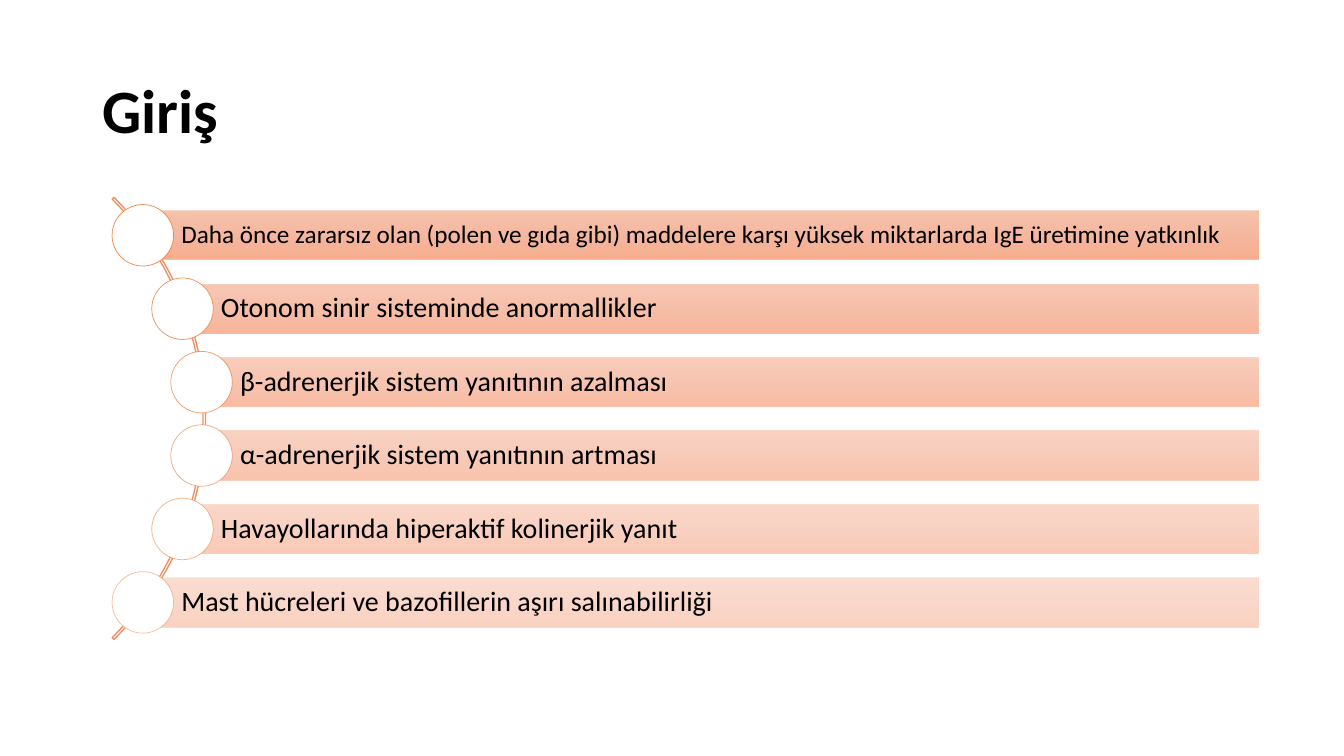
from dataclasses import dataclass

from lxml.etree import SubElement
from pptx import Presentation
from pptx.dml.color import RGBColor
from pptx.enum.shapes import MSO_SHAPE as Preset
from pptx.enum.text import MSO_ANCHOR as Anchor, PP_ALIGN as Align
from pptx.oxml.ns import qn
from pptx.shapes.autoshape import Shape
from pptx.util import Cm, Pt

COLORS = {
    "text": "000000",
    "disc": "FFFFFF",
    "disc_line": "ED7D31",
    "arc": "EF9166",
    "bar_top": "F7BDA5",
    "bar_middle": "F5B196",
    "bar_bottom": "F8A582",
}
BAR_STOPS = {0: "bar_top", 50: "bar_middle", 100: "bar_bottom"}

# Lengths in centimetres
BAR_TOP, BAR_PITCH, BAR_HEIGHT, BAR_RIGHT = 5.31, 1.85, 1.24, 31.72
DISC_SIZE = 1.55
ARC_LEFT, ARC_TOP, ARC_SIZE = -10.57, 2.67, 15.75


@dataclass
class Item:
    text: str
    left: float
    size: int = 20
    inset: float = 0.14


ITEMS = [
    Item("Daha önce zararsız olan (polen ve gıda gibi) maddelere karşı "
         "yüksek miktarlarda IgE üretimine yatkınlık", 3.6, 18, 0.12),
    Item("Otonom sinir sisteminde anormallikler", 4.6),
    Item("β-adrenerjik sistem yanıtının azalması", 5.08),
    Item("α-adrenerjik sistem yanıtının artması", 5.08),
    Item("Havayollarında hiperaktif kolinerjik yanıt", 4.6),
    Item("Mast hücreleri ve bazofillerin aşırı salınabilirliği", 3.6),
]


def color(name: str) -> RGBColor:
    return RGBColor.from_string(COLORS[name])


def add_alpha(color_element, opacity: int) -> None:
    SubElement(color_element, qn("a:alpha"), val=str(opacity * 1000))


def add_preset(page, preset: Preset, left: float, top: float,
               width: float, height: float) -> Shape:
    shape = page.shapes.add_shape(preset, Cm(left), Cm(top), Cm(width), Cm(height))
    shape.shadow.inherit = False
    return shape


def outline(shape: Shape, name: str, width: float) -> None:
    shape.line.color.rgb = color(name)
    shape.line.width = Pt(width)


def write(shape: Shape, text: str, frame_format: dict, font_format: dict) -> None:
    frame = shape.text_frame
    frame_format = {"word_wrap": True, "vertical_anchor": Anchor.MIDDLE, **frame_format}
    for name, value in frame_format.items():
        setattr(frame, name, value)
    para = frame.paragraphs[0]
    para.alignment = Align.LEFT
    para.line_spacing = 0.9
    span = para.add_run()
    span.text = text
    for name, value in {"name": "Calibri", **font_format}.items():
        setattr(span.font, name, value)
    span.font.color.rgb = color("text")


def fill_gradient(shape: Shape, opacity: int) -> None:
    shape.fill.gradient()
    shape.fill.gradient_angle = 270
    stops = next(shape._element.iter(qn("a:gsLst")))
    stops.clear()
    for position, name in BAR_STOPS.items():
        stop = SubElement(stops, qn("a:gs"), pos=str(position * 1000))
        add_alpha(SubElement(stop, qn("a:srgbClr"), val=COLORS[name]), opacity)


def add_arc(page) -> None:
    arc = add_preset(page, Preset.BLOCK_ARC, ARC_LEFT, ARC_TOP, ARC_SIZE, ARC_SIZE)
    for index, value in enumerate((189, 27, 0.004)):
        arc.adjustments[index] = value
    arc.fill.background()
    outline(arc, "arc", 1)


def add_item(page, item: Item, top: float, opacity: int) -> None:
    bar = add_preset(page, Preset.RECTANGLE, item.left, top,
                     BAR_RIGHT - item.left, BAR_HEIGHT)
    fill_gradient(bar, opacity)
    bar.line.fill.background()
    margin = Cm(item.inset)
    write(bar, item.text,
          {"margin_left": Cm(0.97), "margin_right": margin,
           "margin_top": margin, "margin_bottom": margin},
          {"size": Pt(item.size)})

    # Disc centred on the left end of the bar
    disc = add_preset(page, Preset.OVAL, item.left - DISC_SIZE / 2,
                      top + (BAR_HEIGHT - DISC_SIZE) / 2, DISC_SIZE, DISC_SIZE)
    disc.fill.solid()
    disc.fill.fore_color.rgb = color("disc")
    outline(disc, "disc_line", 0.5)
    add_alpha(disc.line._ln.find(".//" + qn("a:srgbClr")), opacity)


def main() -> None:
    deck = Presentation()
    deck.slide_width, deck.slide_height = Cm(33.87), Cm(19.05)
    page = deck.slides.add_slide(deck.slide_layouts[6])

    # Title
    title = page.shapes.add_textbox(Cm(2.33), Cm(1.01), Cm(29.21), Cm(3.68))
    write(title, "Giriş", {}, {"size": Pt(44), "bold": True})

    # Curved list, fading downwards
    add_arc(page)
    for index, item in enumerate(ITEMS):
        add_item(page, item, BAR_TOP + index * BAR_PITCH, 90 - 8 * index)

    deck.save("out.pptx")


if __name__ == "__main__":
    main()
